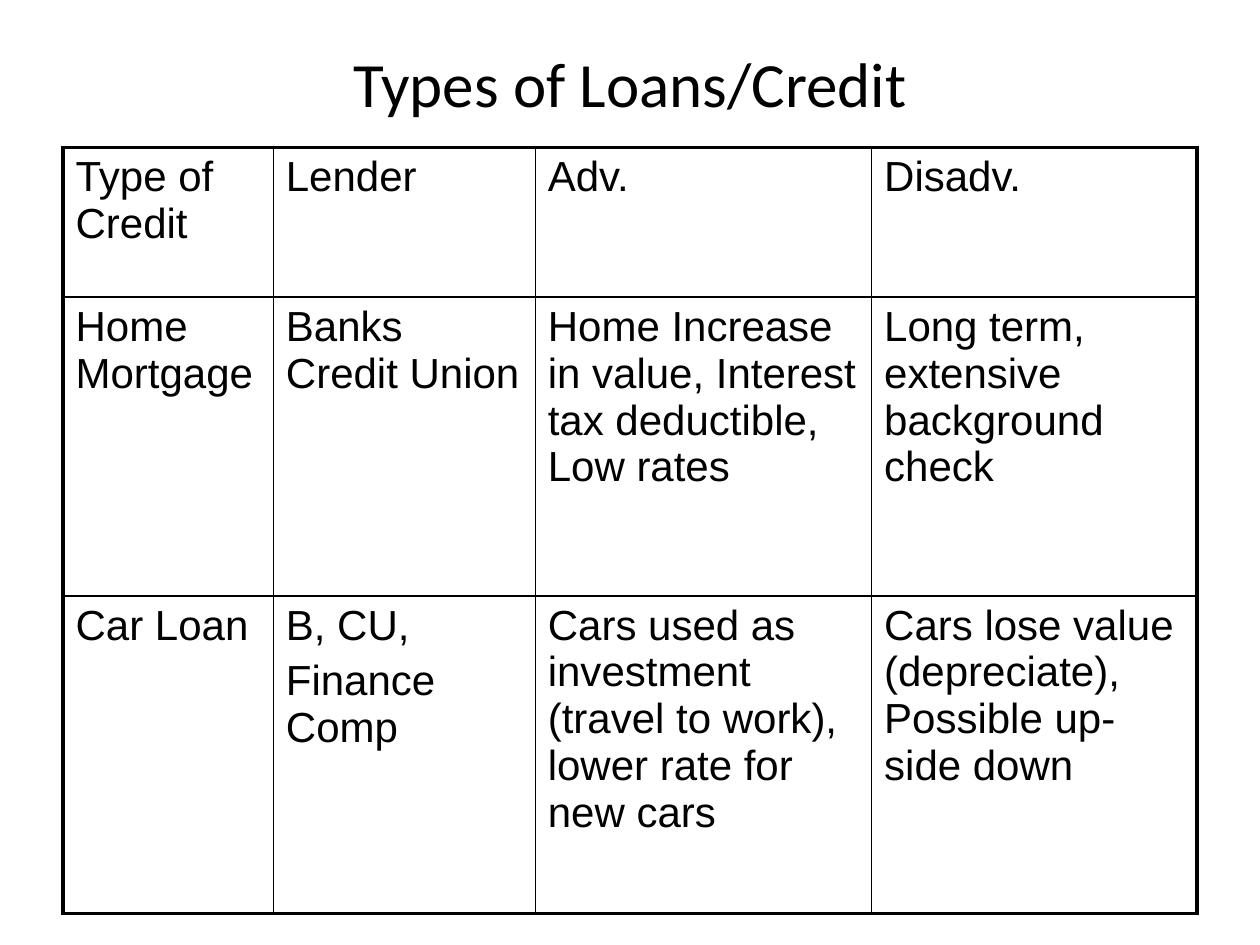
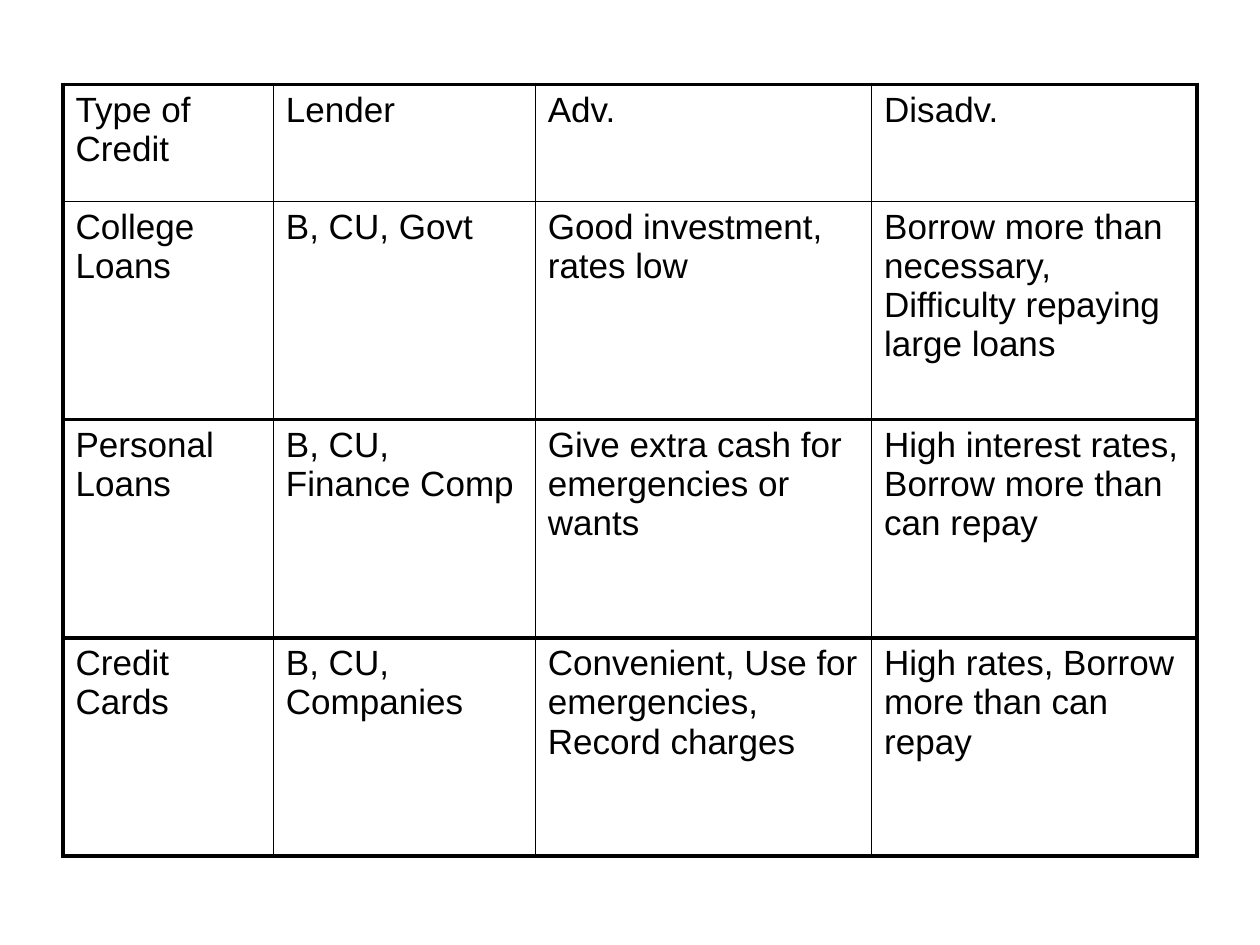
import pptx
import pptx.util
import pptx.dml.color
import pptx.enum.text
from lxml import etree
from pptx.oxml.ns import qn

Cm, Pt = pptx.util.Cm, pptx.util.Pt

# Shared format
INK = "000000"
THIN, THICK = 1, 2.25
LEFT, WIDTH = 1.27, 22.86
COLS = [4.24, 5.28, 6.78, 6.56]
HEADS = ["Type of Credit", "Lender", "Adv.", "Disadv."]

# Cell text: \n starts a paragraph, \v breaks a line
SECURED = [
    ["Home Mortgage", "Banks\vCredit Union",
     "Home Increase in value, Interest tax deductible, Low rates",
     "Long term, extensive background check"],
    ["Car Loan", "B, CU,\nFinance Comp",
     "Cars used as investment (travel to work), lower rate for new cars",
     "Cars lose value (depreciate), Possible up-side down"],
]
OTHER = [
    ["College Loans", "B, CU, Govt", "Good investment, rates low",
     "Borrow more than necessary, Difficulty repaying large loans"],
    ["Personal Loans", "B, CU,\vFinance Comp",
     "Give extra cash for emergencies or wants",
     "High interest rates, Borrow more than can repay"],
    ["Credit Cards", "B, CU, Companies",
     "Convenient, Use for emergencies, Record charges",
     "High rates, Borrow more than can repay"],
]


def tint(code):
    return pptx.dml.color.RGBColor.from_string(code)


def style(item, **values):
    for name, value in values.items():
        setattr(item, name, value)


def write(frame, text, face, size, align):
    frame.text = text
    for n, para in enumerate(frame.paragraphs):
        style(para, alignment=align, space_before=Pt(0.2 * size if n else 0))
        for run in para.runs:
            style(run.font, name=face, size=Pt(size), bold=False)
            run.font.color.rgb = tint(INK)


def edge(cell, side, width):
    props = cell._tc.get_or_add_tcPr()
    line = etree.SubElement(props, qn("a:ln" + side), w=str(int(Pt(width))))
    fill = etree.SubElement(line, qn("a:solidFill"))
    etree.SubElement(fill, qn("a:srgbClr"), val=INK)


def title(slide, text):
    box = slide.shapes.title
    style(box, left=Cm(LEFT), top=Cm(0.76), width=Cm(WIDTH), height=Cm(1.78))
    box.text_frame.vertical_anchor = pptx.enum.text.MSO_ANCHOR.MIDDLE
    write(box.text_frame, text, "Calibri", 36, pptx.enum.text.PP_ALIGN.CENTER)


def grid(slide, top, heights, body, size, rules):
    """Draw a table; rules holds the line widths from top to bottom."""
    rows = [HEADS] + body
    table = slide.shapes.add_table(
        len(rows), len(COLS), Cm(LEFT), Cm(top), Cm(WIDTH),
        Cm(sum(heights))).table
    style(table, first_row=False, horz_banding=False)
    for col, width in zip(table.columns, COLS):
        col.width = Cm(width)
    sides = [THICK] + [THIN] * (len(COLS) - 1) + [THICK]
    for r, texts in enumerate(rows):
        table.rows[r].height = Cm(heights[r])
        for c, text in enumerate(texts):
            cell = table.cell(r, c)
            write(cell.text_frame, text, "Arial", size,
                  pptx.enum.text.PP_ALIGN.LEFT)
            widths = {"L": sides[c], "R": sides[c + 1],
                      "T": rules[r], "B": rules[r + 1]}
            for side, width in widths.items():
                edge(cell, side, width)
            cell.fill.background()


def main():
    deck = pptx.Presentation()
    style(deck, slide_width=Cm(25.4), slide_height=Cm(19.05))

    # Home and car loans
    slide = deck.slides.add_slide(deck.slide_layouts[5])
    title(slide, "Types of Loans/Credit")
    grid(slide, 2.97, [3.02, 6.02, 6.4], SECURED, 24,
         [THICK, THIN, THIN, THICK])

    # College, personal and card credit
    slide = deck.slides.add_slide(deck.slide_layouts[6])
    grid(slide, 1.7, [2.36] + [4.4] * 3, OTHER, 20,
         [THICK, THIN] + [THICK] * 3)

    deck.save("out.pptx")


if __name__ == "__main__":
    main()
